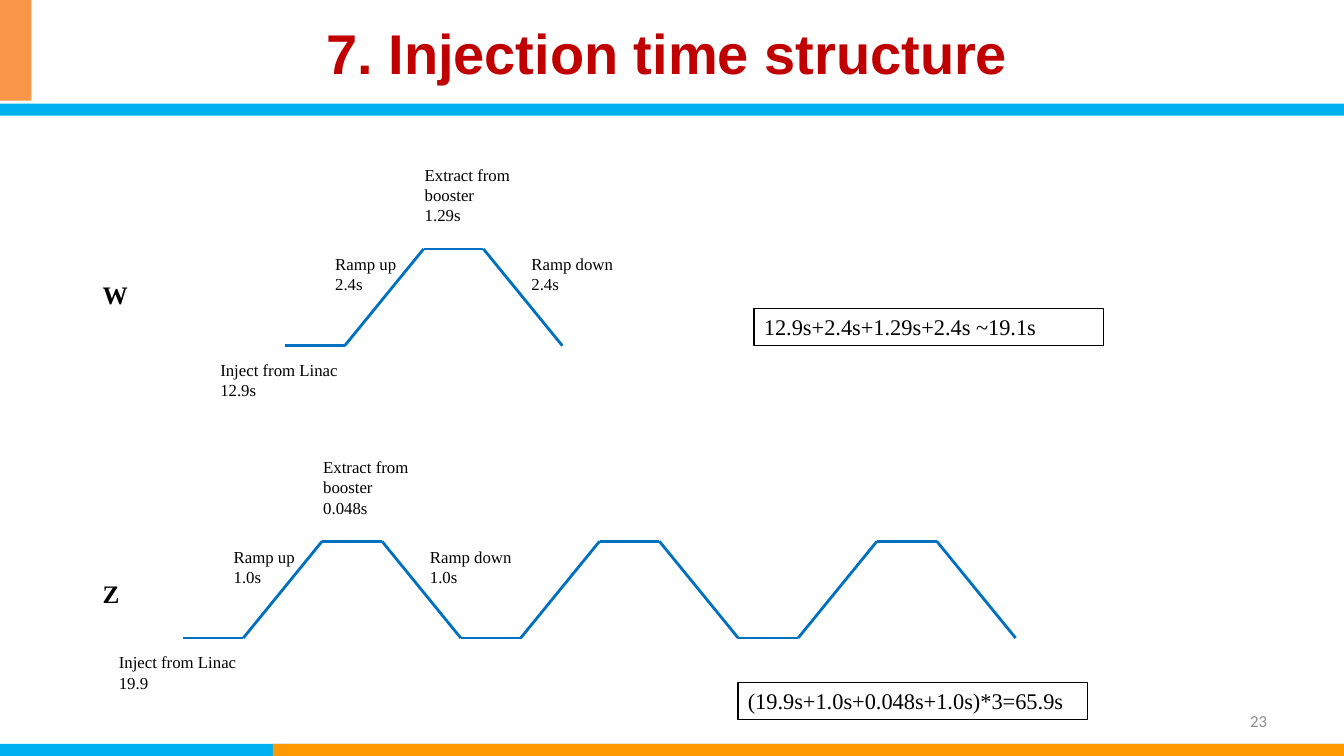
from itertools import accumulate, cycle, pairwise

from lxml import etree
from pptx import Presentation
from pptx import util as u
from pptx.dml.color import RGBColor
from pptx.enum import shapes, text
from pptx.oxml.ns import qn

prs = Presentation()
prs.slide_width, prs.slide_height = u.Inches(13.33), u.Inches(7.5)
COL, ROW = prs.slide_width / 100, prs.slide_height / 100
SERIF = "Times New Roman"
FLAT, RAMP, RISE = 4.45, 5.87, 12.8


def color(target, value):
    """Set a fill or a font to a hex colour."""
    if hasattr(target, "solid"):
        target.solid()
        target.fore_color.rgb = RGBColor.from_string(value)
    else:
        target.color.rgb = RGBColor.from_string(value)


def place(x, y, w, h):
    """Turn columns and rows into slide lengths."""
    return round(x * COL), round(y * ROW), round(w * COL), round(h * ROW)


def write(sp, lines, size, font=SERIF, ink="000000", bold=False,
          align=text.PP_ALIGN.LEFT, anchor=text.MSO_ANCHOR.TOP):
    """Write one paragraph per line into a shape."""
    tf = sp.text_frame
    tf.word_wrap = True
    tf.auto_size = text.MSO_AUTO_SIZE.NONE
    tf.vertical_anchor = anchor
    for i, line in enumerate(lines):
        p = tf.add_paragraph() if i else tf.paragraphs[0]
        p.alignment = align
        r = p.add_run()
        r.text = line
        r.font.size, r.font.name, r.font.bold = u.Pt(size), font, bold
        color(r.font, ink)
    return tf


def rectangle(s, box, fill):
    """Add a plain filled rectangle."""
    sp = s.shapes.add_shape(shapes.MSO_SHAPE.RECTANGLE, *place(*box))
    sp.shadow.inherit = False
    color(sp.fill, fill)
    sp.line.fill.background()
    return sp


def frame(s):
    """Draw the coloured bands and the page number."""
    rectangle(s, (0, 98.4, 100, 1.6), "00B0F0")
    rectangle(s, (20.3, 98.4, 79.7, 1.6), "FF9900")
    rectangle(s, (0, 13.7, 100, 1.6), "00B0F0")
    rectangle(s, (0, 0, 2.33, 13.33), "F79646")
    sp = s.shapes.add_textbox(*place(71.7, 92.67, 23.33, 5.33))
    write(sp, ["23"], 12, "Calibri", "8C8C8C",
          align=text.PP_ALIGN.RIGHT, anchor=text.MSO_ANCHOR.MIDDLE)


def title(s, box, words):
    """Place and format the title."""
    sp = s.shapes.title
    sp.left, sp.top, sp.width, sp.height = place(*box)
    tf = write(sp, [words], 40, "Arial", "C00000", True,
               text.PP_ALIGN.CENTER, text.MSO_ANCHOR.MIDDLE)
    tf.paragraphs[0].line_spacing = 0.9


def segment(group, start, end):
    """Draw one straight part of the ramp curve."""
    (x1, y1), (x2, y2) = start, end
    line = group.shapes.add_connector(
        shapes.MSO_CONNECTOR.STRAIGHT,
        round(x1 * COL), round(y1 * ROW), round(x2 * COL), round(y2 * ROW))
    line.line.width = u.Pt(2)
    color(line.line.fill, "0070C0")
    etree.SubElement(line._element.spPr, qn("a:effectLst"))


def ramp_curve(s, x, base, cycles, times):
    """Draw booster cycles from a start point and label the first one."""
    group = s.shapes.add_group_shape()
    xs = accumulate([FLAT, RAMP] * 2 * cycles, initial=x)
    levels = cycle([base, base, base - RISE, base - RISE])
    for start, end in pairwise(zip(xs, levels)):
        segment(group, start, end)
    labels = [("Inject from Linac", -5.55, 1.2, 10.95, 6.67),
              ("Ramp up", 3, -RISE, 6.83, 6.67),
              ("Extract from booster", 9.66, -24.6, 8.1, 9.47),
              ("Ramp down", 17.6, -RISE, 8.1, 6.67)]
    for (name, dx, dy, w, h), time in zip(labels, times):
        sp = group.shapes.add_textbox(*place(x + dx, base + dy, w, h))
        write(sp, [name, time], 12)


def mode_name(s, x, y, name):
    """Name the operation mode of a row."""
    write(s.shapes.add_textbox(*place(x, y, 6, 5.33)), [name], 18, bold=True)


def total(s, x, y, formula):
    """Show the total time in an outlined box."""
    sp = rectangle(s, (x, y, 26, 4.93), "FFFFFF")
    color(sp.line.fill, "000000")
    sp.line.width = u.Pt(1)
    write(sp, [formula], 16)


def injection_slide():
    """Build the injection time slide."""
    s = prs.slides.add_slide(prs.slide_layouts[5])
    frame(s)
    title(s, (5.48, 2.13, 88.27, 10.53), "7. Injection time structure")
    mode_name(s, 6.9, 36.27, "W")
    total(s, 56.1, 40.8, "12.9s+2.4s+1.29s+2.4s ~19.1s")
    ramp_curve(s, 21.2, 45.73, 1, ["12.9s", "2.4s", "1.29s", "2.4s"])
    mode_name(s, 6.9, 75.87, "Z")
    total(s, 54.9, 90.27, "(19.9s+1.0s+0.048s+1.0s)*3=65.9s")
    ramp_curve(s, 13.65, 84.4, 3, ["19.9", "1.0s", "0.048s", "1.0s"])


if __name__ == "__main__":
    injection_slide()
    prs.save("out.pptx")
